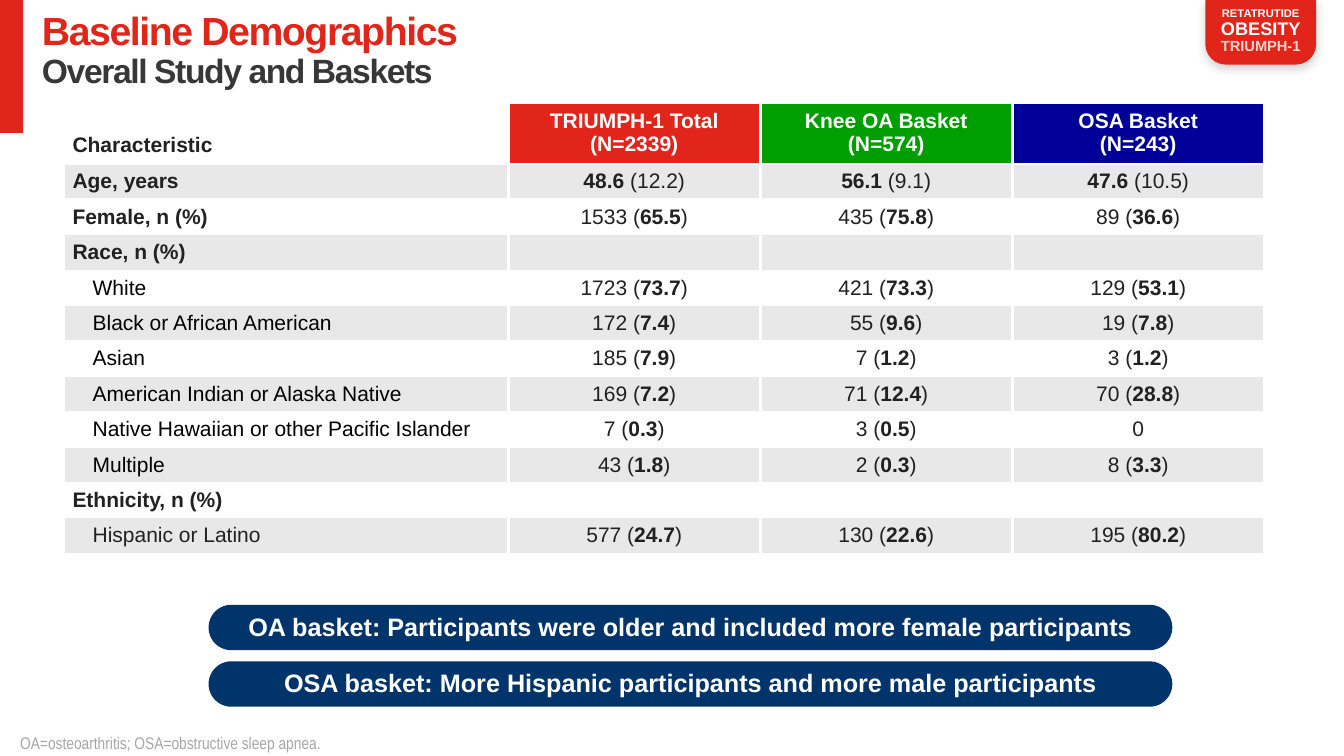
"""Builds the baseline demographics slide with its four-column table and takeaways."""
from lxml import etree
from pptx import Presentation
from pptx.dml.color import RGBColor
from pptx.enum.shapes import MSO_SHAPE
from pptx.enum.text import MSO_ANCHOR, MSO_AUTO_SIZE, PP_ALIGN
from pptx.oxml import parse_xml
from pptx.oxml.ns import qn
from pptx.util import Pt

RECTANGLE = MSO_SHAPE.RECTANGLE
ROUNDED = MSO_SHAPE.ROUNDED_RECTANGLE
BADGE = MSO_SHAPE.ROUND_2_SAME_RECTANGLE
TOP, MIDDLE, BOTTOM = MSO_ANCHOR.TOP, MSO_ANCHOR.MIDDLE, MSO_ANCHOR.BOTTOM
CENTER, LEFT = PP_ALIGN.CENTER, PP_ALIGN.LEFT
NO_AUTOFIT = MSO_AUTO_SIZE.NONE
RED, NAVY, INK, WHITE, GREY = "E1251B", "01346B", "212121", "FFFFFF", "E8E8E8"
DRAWING = "http://schemas.openxmlformats.org/drawingml/2006/main"
HEADER_HEIGHT, ROW_HEIGHT = 43.5, 25.3

COLUMNS = [
    (46, 317, WHITE, ["*Characteristic*", "*Age, years*", "*Female, n (%)*", "*Race, n (%)*",
                      "White", "Black or African American", "Asian",
                      "American Indian or Alaska Native",
                      "Native Hawaiian or other Pacific Islander", "Multiple",
                      "*Ethnicity, n (%)*", "Hispanic or Latino"]),
    (363, 180, RED, ["*TRIUMPH-1 Total*\n*(N=2339)*", "*48.6* (12.2)", "1533 (*65.5*)", "",
                     "1723 (*73.7*)", "172 (*7.4*)", "185 (*7.9*)", "169 (*7.2*)",
                     "7 (*0.3*)", "43 (*1.8*)", "", "577 (*24.7*)"]),
    (543, 180, "009E00", ["*Knee OA Basket*\n*(N=574)*", "*56.1* (9.1)", "435 (*75.8*)", "",
                          "421 (*73.3*)", "55 (*9.6*)", "7 (*1.2*)", "71 (*12.4*)",
                          "3 (*0.5*)", "2 (*0.3*)", "", "130 (*22.6*)"]),
    (723, 180, "000099", ["*OSA Basket*\n*(N=243)*", "*47.6* (10.5)", "89 (*36.6*)", "",
                          "129 (*53.1*)", "19 (*7.8*)", "3 (*1.2*)", "70 (*28.8*)",
                          "0", "8 (*3.3*)", "", "195 (*80.2*)"]),
]


def color(hex_string):
    """Return the colour for a hex string."""
    return RGBColor.from_string(hex_string)


def add_run(paragraph, text, size, hex_string, bold=True, name="Arial"):
    """Append one formatted run to a paragraph."""
    run = paragraph.add_run()
    run.text = text
    run.font.name, run.font.size, run.font.bold = name, Pt(size), bold
    run.font.color.rgb = color(hex_string)
    return run


presentation = Presentation()
presentation.slide_width, presentation.slide_height = Pt(960), Pt(540)
slide = presentation.slides.add_slide(presentation.slide_layouts[5])

title = slide.shapes.title
title.left, title.top, title.width, title.height = Pt(30), Pt(8.6), Pt(780), Pt(30)
frame = title.text_frame
frame.margin_left = frame.margin_right = frame.margin_top = frame.margin_bottom = 0
frame.vertical_anchor, frame.auto_size, frame.word_wrap = TOP, NO_AUTOFIT, True
paragraph = frame.paragraphs[0]
paragraph.alignment, paragraph.line_spacing = LEFT, 0.9
heading = add_run(paragraph, "Baseline Demographics", 28, RED)
paragraph.add_line_break()
subheading = add_run(paragraph, "Overall Study and Baskets", 24, "373737")
for run in (heading, subheading):
    run.font._element.set("spc", "-100")

panels = [
    (RECTANGLE, 0, 0, 16.6, 95, RED, [], []),
    (BADGE, 861, 0, 79.2, 46.2, RED, [0, 0.319],
     [("RETATRUTIDE", 8, WHITE), ("OBESITY", 13, WHITE), ("TRIUMPH-1", 10.5, "FBD2CB")]),
    (ROUNDED, 149, 432, 688.4, 32.4, NAVY, [0.5],
     [("OA basket: Participants were older and included more female participants", 18, WHITE)]),
    (ROUNDED, 149, 472.4, 688.4, 32.4, NAVY, [0.5],
     [("OSA basket: More Hispanic participants and more male participants", 18, WHITE)]),
]
for kind, left, top, width, height, fill, adjustments, lines in panels:
    shape = slide.shapes.add_shape(kind, Pt(left), Pt(top), Pt(width), Pt(height))
    shape.shadow.inherit = False
    shape.fill.solid()
    shape.fill.fore_color.rgb = color(fill)
    shape.line.fill.background()
    for index, value in enumerate(adjustments):
        shape.adjustments[index] = value
    frame = shape.text_frame
    frame.word_wrap, frame.vertical_anchor = True, MIDDLE
    frame.margin_left = frame.margin_right = Pt(6)
    frame.margin_top, frame.margin_bottom = 0, Pt(2)
    for index, (text, size, hex_string) in enumerate(lines):
        paragraph = frame.add_paragraph() if index else frame.paragraphs[0]
        paragraph.alignment = CENTER
        add_run(paragraph, text, size, hex_string)
    if kind == BADGE:
        frame.margin_top, frame.margin_bottom = Pt(7.2), Pt(4.3)
        for paragraph in frame.paragraphs:
            paragraph.line_spacing = 0.9
        effects = shape._element.spPr.find(qn("a:effectLst"))
        shadow = etree.SubElement(effects, qn("a:outerShdw"), blurRad=str(Pt(7)),
                                  dist=str(Pt(3)), dir="5400000", rotWithShape="0")
        tint = etree.SubElement(shadow, qn("a:srgbClr"), val=INK)
        etree.SubElement(tint, qn("a:alpha"), val="20000")

for left, width, header_fill, texts in COLUMNS:
    is_label = left == COLUMNS[0][0]
    height = HEADER_HEIGHT + ROW_HEIGHT * (len(texts) - 1)
    table = slide.shapes.add_table(len(texts), 1, Pt(left), Pt(73.6), Pt(width), Pt(height)).table
    table.first_row = table.horz_banding = False
    table.columns[0].width = Pt(width)
    for row, text in enumerate(texts):
        is_header = row == 0
        is_indented = is_label and not text.startswith("*")
        table.rows[row].height = Pt(HEADER_HEIGHT if is_header else ROW_HEIGHT)
        cell = table.cell(row, 0)
        cell.fill.solid()
        cell.fill.fore_color.rgb = color(header_fill if is_header else GREY if row % 2 else WHITE)
        cell.vertical_anchor = BOTTOM if is_header and is_label else MIDDLE
        cell.margin_left = Pt((20.2 if is_indented else 5.8) if is_label else 1)
        cell.margin_right = Pt(1)
        cell.margin_top, cell.margin_bottom = (Pt(3.5), Pt(5)) if is_header else (0, 0)
        ink = WHITE if is_header and not is_label else INK
        if is_indented and row < len(texts) - 1:
            ink = "000000"
        for index, line in enumerate(text.split("\n")):
            paragraph = cell.text_frame.add_paragraph() if index else cell.text_frame.paragraphs[0]
            paragraph.alignment = LEFT if is_label else CENTER
            for part, piece in enumerate(line.split("*")):
                if piece:
                    add_run(paragraph, piece, 15, ink, bold=part % 2 == 1)
        sides = ["R"] if is_label else ["L", "R"]
        sides += {0: ["B"], 1: ["T"]}.get(row, [])
        for index, side in enumerate(sides):
            cell._tc.get_or_add_tcPr().insert(index, parse_xml(
                f'<a:ln{side} xmlns:a="{DRAWING}" w="{Pt(2.25)}"><a:solidFill>'
                f'<a:srgbClr val="{WHITE}"/></a:solidFill></a:ln{side}>'))

footnote = slide.shapes.add_textbox(Pt(14.4), Pt(504), Pt(706), Pt(33.5))
frame = footnote.text_frame
frame.word_wrap, frame.vertical_anchor = True, BOTTOM
frame.margin_left = frame.margin_right = frame.margin_top = frame.margin_bottom = 0
add_run(frame.paragraphs[0], "OA=osteoarthritis; OSA=obstructive sleep apnea.", 12, "A6A6A6",
        bold=False, name="Arial Narrow")

presentation.save("out.pptx")
